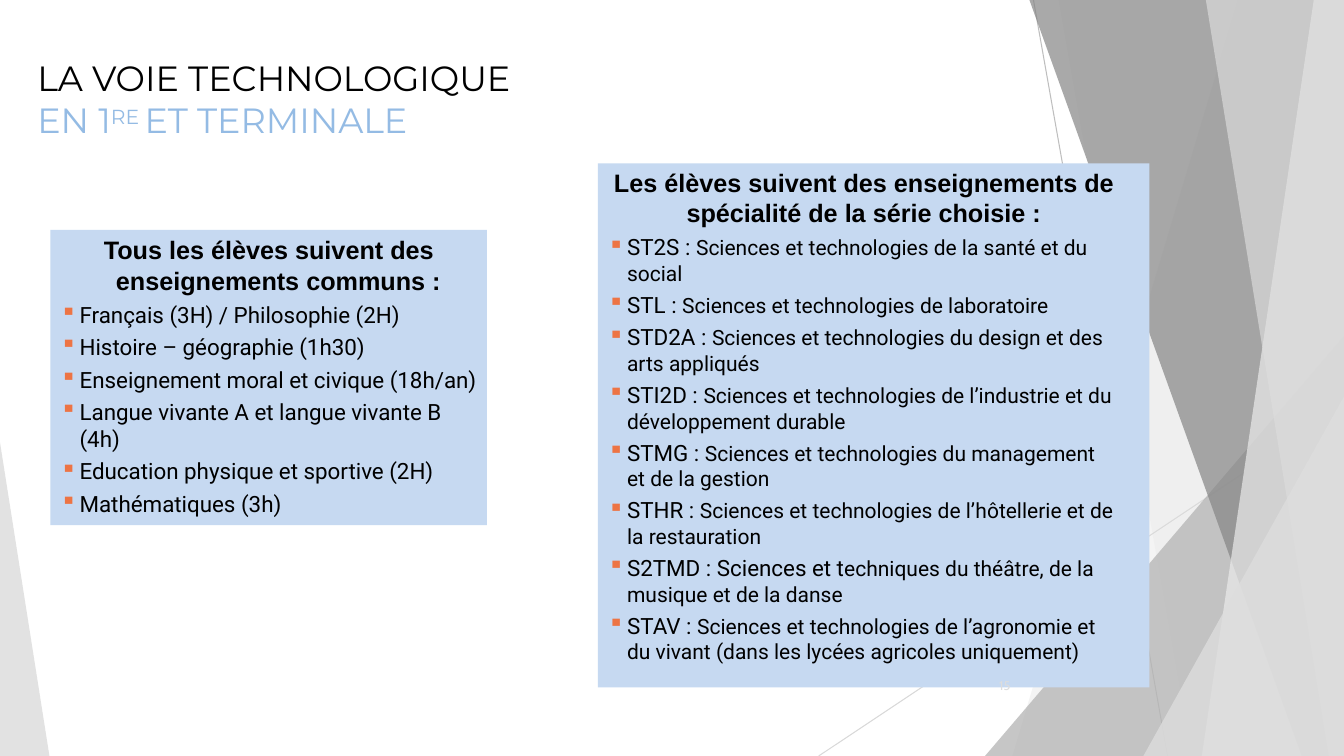
from dataclasses import dataclass
from typing import Any

from lxml.etree import SubElement as Sub
from pptx import Presentation
from pptx.dml.color import RGBColor
from pptx.enum.shapes import MSO_CONNECTOR as Link, MSO_SHAPE as Kind
from pptx.enum.text import MSO_ANCHOR as Anchor, MSO_AUTO_SIZE as Fit, PP_ALIGN as Align
from pptx.oxml.ns import qn
from pptx.util import Inches, Pt

BLACK = RGBColor(0x00, 0x00, 0x00)
SKY = RGBColor(0x94, 0xBB, 0xE4)
PALE = RGBColor(0xC6, 0xD9, 0xF1)
ORANGE = RGBColor(0xED, 0x74, 0x44)
MIST = RGBColor(0xDD, 0xDD, 0xDD)
SILVER = RGBColor(0xD9, 0xD9, 0xD9)
STEEL = RGBColor(0xBE, 0xBE, 0xBE)
GREY = RGBColor(0xB1, 0xB1, 0xB1)
DARK = RGBColor(0x85, 0x85, 0x85)
LIGHT = RGBColor(0xEB, 0xEB, 0xEB)
WIDE, HIGH = 13.33, 7.5


@dataclass
class Ray:
    start: tuple[float, float]
    end: tuple[float, float]
    color: RGBColor


@dataclass
class Shard:
    points: list[tuple[float, float]]
    color: RGBColor
    alpha: int


@dataclass
class Head:
    text: str
    left: float
    first: float = 0


@dataclass
class Item:
    lead: str
    rest: str = ""
    bullet: bool = True


@dataclass
class Panel:
    area: tuple[float, float, float, float]
    top: float
    right: float
    heads: list[Head]
    items: list[Item]


def band(top: float, foot: float) -> list[tuple[float, float]]:
    return [(WIDE, 0), (top, 0), (foot, HIGH), (WIDE, HIGH)]


def wedge(peak: float, foot: float) -> list[tuple[float, float]]:
    return [(WIDE, peak), (foot, HIGH), (WIDE, HIGH)]


RAYS = [
    Ray((10.25, 0), (11.58, HIGH), STEEL),
    Ray((WIDE, 4.03), (8.12, HIGH), SILVER),
]
SHARDS = [
    Shard(band(12.28, 10.04), MIST, 30),
    Shard(band(10.5, 11.82), MIST, 20),
    Shard(wedge(3.33, 9.77), GREY, 72),
    Shard(band(10.21, 12.91), DARK, 70),
    Shard(band(13.03, 11.92), LIGHT, 70),
    Shard(band(11.96, 13.18), MIST, 65),
    Shard(wedge(3.93, 11.34), MIST, 80),
    Shard([(0, 4.39), (0, HIGH), (0.49, HIGH)], MIST, 85),
]
COMMON = Panel(
    (0.5, 2.28, 4.33, 2.93), 0.05, 0,
    [Head("Tous les élèves suivent des", 0.53), Head("enseignements communs :", 0.65)],
    [
        Item("Français (3H) / Philosophie (2H)"),
        Item("Histoire – géographie (1h30)"),
        Item("Enseignement moral et civique (18h/an)"),
        Item("Langue vivante A et langue vivante B"),
        Item("(4h)", bullet=False),
        Item("Education physique et sportive (2H)"),
        Item("Mathématiques (3h)"),
    ],
)
SERIES = Panel(
    (5.93, 1.62, 5.47, 5.2), 0.04, 0.3,
    [Head("Les élèves suivent des enseignements de spécialité de la série choisie :", 0.88, -0.72)],
    [
        Item("ST2S : ", "Sciences et technologies de la santé et du social"),
        Item("STL : ", "Sciences et technologies de laboratoire"),
        Item("STD2A : ", "Sciences et technologies du design et des arts appliqués"),
        Item("STI2D : ", "Sciences et technologies de l’industrie et du développement durable"),
        Item("STMG : ", "Sciences et technologies du management"),
        Item("", "et de la gestion", False),
        Item("STHR : ", "Sciences et technologies de l’hôtellerie et de la restauration"),
        Item("S2TMD : Sciences et t", "echniques du théâtre, de la musique et de la danse"),
        Item("STAV : ", "Sciences et technologies de l’agronomie et"),
        Item("", "du vivant (dans les lycées agricoles uniquement)", False),
    ],
)


def setup(frame: Any, top: float, right: float = 0) -> None:
    frame.word_wrap = True
    frame.auto_size = Fit.NONE
    frame.vertical_anchor = Anchor.TOP
    frame.margin_left = frame.margin_bottom = 0
    frame.margin_top, frame.margin_right = Inches(top), Inches(right)


def indent(para: Any, left: float, first: float = 0) -> None:
    props = para._p.get_or_add_pPr()
    props.set("marL", str(Inches(left)))
    props.set("indent", str(Inches(first)))


def write(para: Any, text: str, size: float) -> Any:
    run = para.add_run()
    run.text = text
    run.font.size = Pt(size)
    return run


def style(para: Any, face: str, color: RGBColor, before: float) -> None:
    para.alignment = Align.LEFT
    para.space_before = Pt(before)
    para.font.name = face
    para.font.color.rgb = color


def mark(para: Any) -> None:
    props = para._p.get_or_add_pPr()
    Sub(Sub(props, qn("a:buClr")), qn("a:srgbClr"), val=str(ORANGE))
    Sub(props, qn("a:buChar"), char="▪")


def draw_ray(shapes: Any, ray: Ray) -> None:
    ends = [Inches(n) for n in (*ray.start, *ray.end)]
    line = shapes.add_connector(Link.STRAIGHT, *ends)
    line.line.color.rgb = ray.color
    line.line.width = Pt(0.75)
    Sub(line._element.spPr, qn("a:effectLst"))


def draw_shard(shapes: Any, shard: Shard) -> None:
    first, *others = [(Inches(x), Inches(y)) for x, y in shard.points]
    pen = shapes.build_freeform(*first)
    pen.add_line_segments(others, close=True)
    shape = pen.convert_to_shape()
    shape.shadow.inherit = False
    shape.fill.solid()
    shape.fill.fore_color.rgb = shard.color
    shape.line.fill.background()
    tint = shape._element.spPr.find(".//" + qn("a:srgbClr"))
    Sub(tint, qn("a:alpha"), val=str(shard.alpha * 1000))


def draw_panel(shapes: Any, panel: Panel) -> None:
    box = shapes.add_shape(Kind.RECTANGLE, *map(Inches, panel.area))
    box.shadow.inherit = False
    box.fill.solid()
    box.fill.fore_color.rgb = PALE
    box.line.fill.background()
    frame = box.text_frame
    setup(frame, panel.top, panel.right)
    for rank, head in enumerate(panel.heads):
        para = frame.add_paragraph() if rank else frame.paragraphs[0]
        indent(para, head.left, head.first)
        style(para, "Arial", BLACK, 0 if rank else 3.2)
        para.font.bold = True
        write(para, head.text, 18)
    for item in panel.items:
        para = frame.add_paragraph()
        indent(para, 0.29, -0.19 if item.bullet else 0)
        if item.bullet:
            mark(para)
        style(para, "Roboto", BLACK, 4 if item.bullet else 0)
        for text, size in ((item.lead, 16), (item.rest, 15)):
            if text:
                write(para, text, size)


def draw_title(title: Any) -> None:
    title.left, title.top, title.width, title.height = map(Inches, (0.33, 0.55, 5.15, 0.86))
    setup(title.text_frame, 0.01)
    para = title.text_frame.paragraphs[0]
    indent(para, 0.04)
    style(para, "Montserrat", SKY, 0.9)
    write(para, "LA VOIE TECHNOLOGIQUE ", 25).font.color.rgb = BLACK
    write(para, "EN 1", 25)
    write(para, "RE ", 25).font._element.set("baseline", "25000")
    write(para, "ET TERMINALE", 25)


def draw_page(shapes: Any) -> None:
    box = shapes.add_textbox(*map(Inches, (9.9, 6.72, 0.16, 0.17)))
    setup(box.text_frame, 0.01)
    para = box.text_frame.paragraphs[0]
    indent(para, 0.01)
    style(para, "Cabin", MIST, 0.5)
    write(para, "15", 9)


def main() -> None:
    deck = Presentation()
    deck.slide_width, deck.slide_height = Inches(WIDE), Inches(HIGH)
    shapes = deck.slides.add_slide(deck.slide_layouts[5]).shapes
    for ray in RAYS:
        draw_ray(shapes, ray)
    for shard in SHARDS:
        draw_shard(shapes, shard)
    draw_title(shapes.title)
    for panel in (COMMON, SERIES):
        draw_panel(shapes, panel)
    draw_page(shapes)
    deck.save("out.pptx")


if __name__ == "__main__":
    main()
